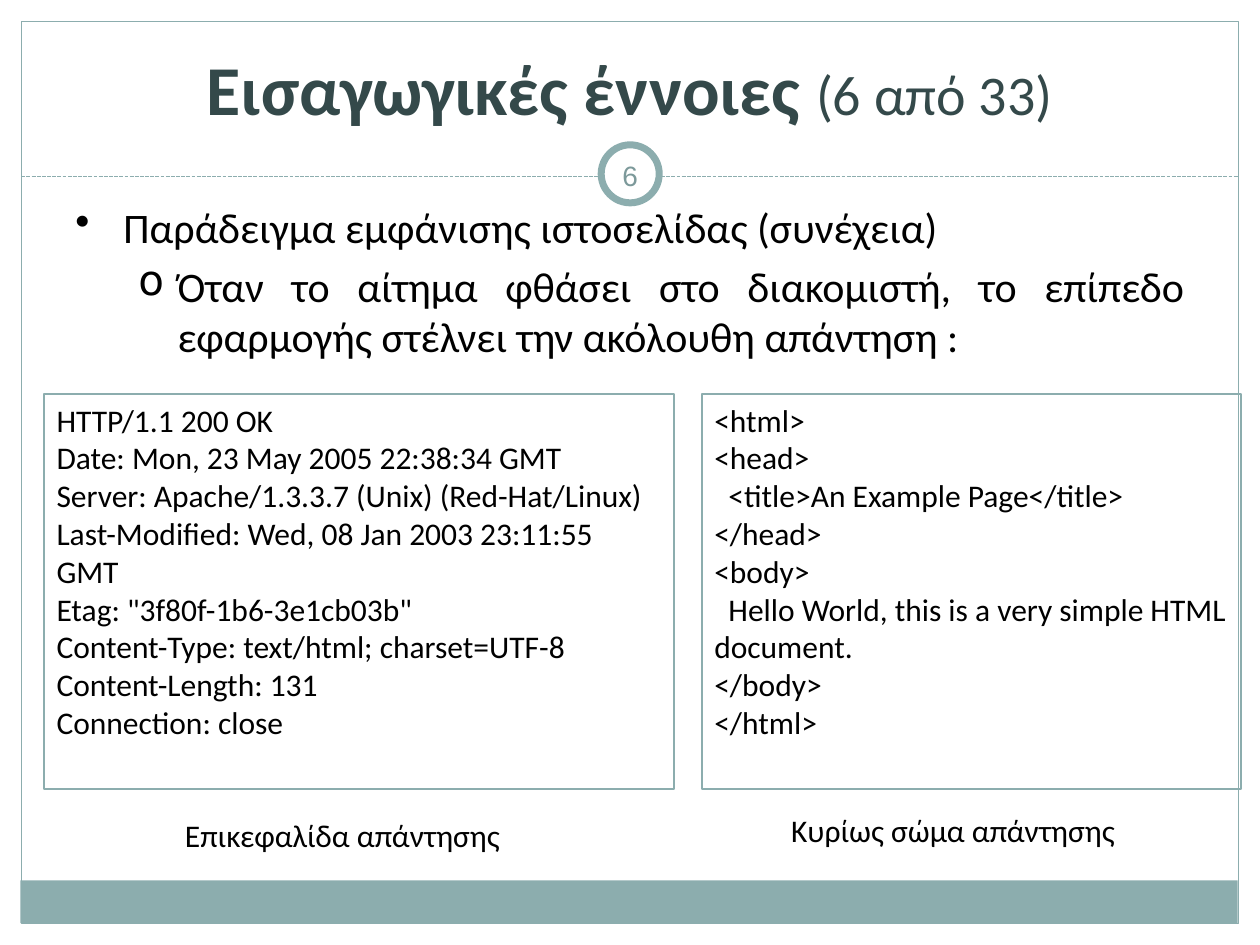
from lxml import etree
from pptx import Presentation
from pptx import util as u
from pptx.dml.color import RGBColor
from pptx.enum import dml, shapes, text
from pptx.oxml import ns

TEAL = RGBColor(0x8C, 0xAD, 0xAE)
DARK_TEAL = RGBColor(0x34, 0x49, 0x4A)
NUMBER_TEAL = RGBColor(0x7C, 0x99, 0x9A)
BLACK = RGBColor(0, 0, 0)
WHITE = RGBColor(0xFF, 0xFF, 0xFF)

RESPONSE_HEADER = """HTTP/1.1 200 OK
Date: Mon, 23 May 2005 22:38:34 GMT
Server: Apache/1.3.3.7 (Unix) (Red-Hat/Linux)
Last-Modified: Wed, 08 Jan 2003 23:11:55 GMT
Etag: "3f80f-1b6-3e1cb03b"
Content-Type: text/html; charset=UTF-8
Content-Length: 131
Connection: close"""

RESPONSE_BODY = """<html>
<head>
  <title>An Example Page</title>
</head>
<body>
  Hello World, this is a very simple HTML document.
</body>
</html>"""


class SlideBuilder:
    font = "Calibri"

    def __init__(self, slide):
        self.slide = slide

    def style(self, run, size, color=BLACK, bold=False, font=None):
        run.font.name = font or self.font
        run.font.size = u.Pt(size)
        run.font.bold = bold
        run.font.color.rgb = color

    def fill_text(self, shape, content, size, color=BLACK, font=None,
                  align=text.PP_ALIGN.LEFT, anchor=text.MSO_ANCHOR.TOP, wrap=True):
        frame = shape.text_frame
        frame.text = content
        frame.word_wrap = wrap
        frame.vertical_anchor = anchor
        for paragraph in frame.paragraphs:
            paragraph.alignment = align
            for run in paragraph.runs:
                self.style(run, size, color, font=font)
        return frame

    def shape(self, kind, left, top, width, height, fill=None, line=None):
        shape = self.slide.shapes.add_shape(
            kind, u.Cm(left), u.Cm(top), u.Cm(width), u.Cm(height))
        shape.shadow.inherit = False
        if fill is None:
            shape.fill.background()
        else:
            shape.fill.solid()
            shape.fill.fore_color.rgb = fill
        if line is None:
            shape.line.fill.background()
        else:
            shape.line.color.rgb = TEAL
            shape.line.width = u.Pt(line)
        return shape

    def rectangle(self, *box, **look):
        return self.shape(shapes.MSO_SHAPE.RECTANGLE, *box, **look)

    def dashed_line(self, left, right, y):
        line = self.slide.shapes.add_connector(
            shapes.MSO_CONNECTOR.STRAIGHT, u.Cm(left), u.Cm(y), u.Cm(right), u.Cm(y))
        line.line.color.rgb = TEAL
        line.line.width = u.Pt(0.75)
        line.line.dash_style = dml.MSO_LINE.SQUARE_DOT
        properties = line.element.find(ns.qn("p:spPr"))
        etree.SubElement(properties, ns.qn("a:effectLst"))

    def text_box(self, left, top, width, height, content, size, **look):
        box = self.slide.shapes.add_textbox(
            u.Cm(left), u.Cm(top), u.Cm(width), u.Cm(height))
        return self.fill_text(box, content, size, **look)

    def bullet(self, paragraph, mark, margin, hanging, level=0):
        paragraph.level = level
        properties = paragraph._p.get_or_add_pPr()
        properties.set("marL", str(u.Cm(margin)))
        properties.set("indent", str(-u.Cm(hanging)))
        etree.SubElement(properties, ns.qn("a:buChar"), char=mark)


def main():
    presentation = Presentation()
    presentation.slide_width = u.Cm(25.4)
    presentation.slide_height = u.Cm(19.05)
    slide = presentation.slides.add_slide(presentation.slide_layouts[6])
    builder = SlideBuilder(slide)
    center, middle = text.PP_ALIGN.CENTER, text.MSO_ANCHOR.MIDDLE

    # Frame, bottom band and divider
    builder.rectangle(0.41, 17.75, 24.54, 0.86, fill=TEAL)
    builder.rectangle(0.43, 0.43, 24.54, 18.19, line=0.75)
    builder.dashed_line(0.43, 24.97, 3.56)

    # Slide number badge
    builder.shape(shapes.MSO_SHAPE.OVAL, 12.12, 2.92, 1.17, 1.17, fill=WHITE, line=4)
    number = builder.text_box(12.07, 2.92, 1.27, 1.22, "6", 16, color=NUMBER_TEAL,
                              font="Arial", align=center, anchor=middle)
    number.margin_left = number.margin_right = u.Cm(0.13)

    # Title
    title = builder.text_box(1.27, 0.51, 22.86, 2.51, "Εισαγωγικές έννοιες ", 40,
                             color=DARK_TEAL, align=center, anchor=middle)
    heading = title.paragraphs[0]
    heading.runs[0].font.bold = True
    counter = heading.add_run()
    counter.text = "(6 από 33)"
    builder.style(counter, 32, DARK_TEAL)

    # Bulleted text
    body = builder.text_box(
        1.27, 3.94, 22.86, 4.39,
        "Παράδειγμα εμφάνισης ιστοσελίδας (συνέχεια)\n"
        "Όταν το αίτημα φθάσει στο διακομιστή, το επίπεδο εφαρμογής "
        "στέλνει την ακόλουθη απάντηση :",
        24, align=text.PP_ALIGN.JUSTIFY)
    topic, detail = body.paragraphs
    builder.bullet(topic, "•", 0.97, 0.97)
    builder.bullet(detail, "o", 2.06, 0.79, level=1)
    detail.space_before = u.Pt(4.8)

    # Response panels
    for left, width, content in ((0.89, 12.7, RESPONSE_HEADER),
                                 (14.15, 10.87, RESPONSE_BODY)):
        panel = builder.rectangle(left, 7.95, width, 7.95, line=1)
        builder.fill_text(panel, content, 18)

    # Captions
    builder.text_box(15.7, 16.23, 7.75, 1.02, "Κυρίως σώμα απάντησης", 18, wrap=False)
    builder.text_box(3.48, 16.33, 7.52, 1.02, "Επικεφαλίδα απάντησης", 18, wrap=False)

    presentation.save("out.pptx")


if __name__ == "__main__":
    main()
